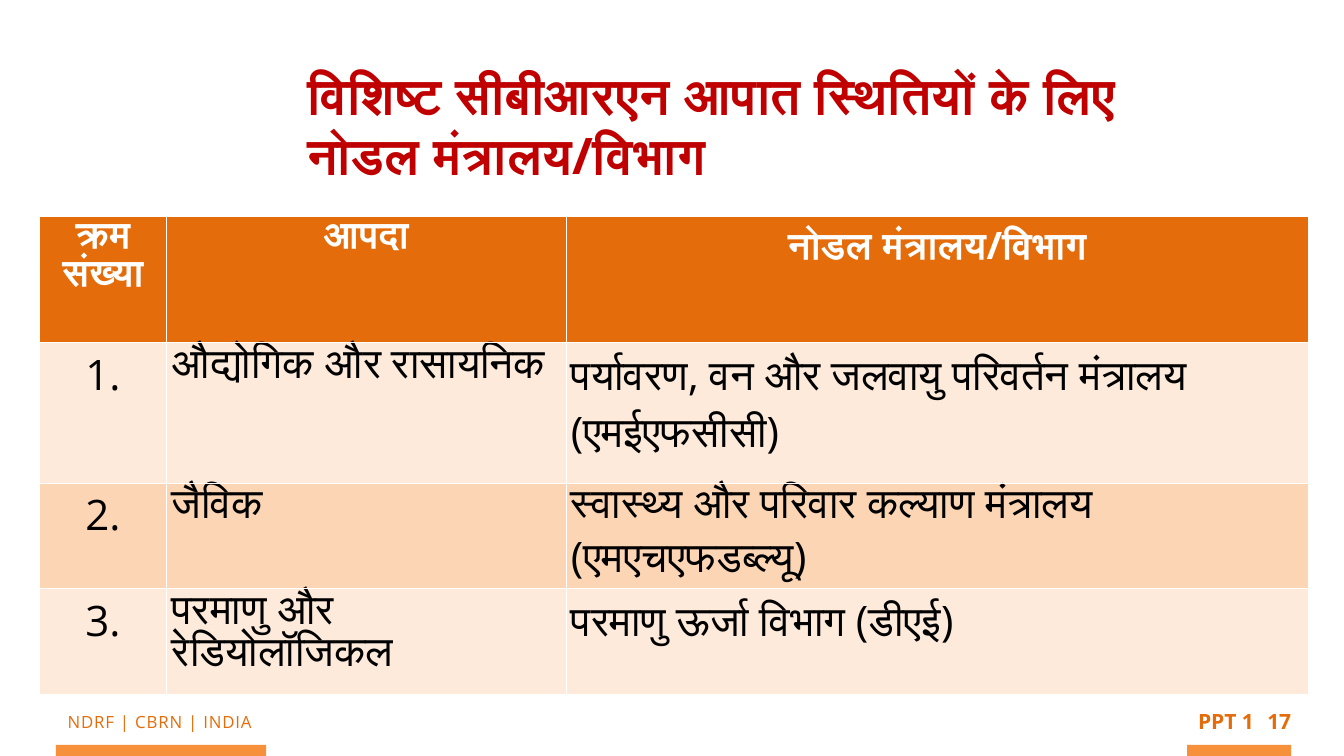
from dataclasses import dataclass
from pptx import Presentation
from pptx.dml.color import RGBColor as Rgb
from pptx.enum.shapes import MSO_SHAPE as Kind
from pptx.enum.text import PP_ALIGN as Align
from pptx.util import Inches, Pt


@dataclass(frozen=True)
class Theme:
    font: str = "Open Sans"
    red: str = "C00000"
    orange: str = "E46C0A"
    bar: str = "F7903B"
    white: str = "FFFFFF"
    black: str = "000000"
    bands: tuple = ("FDEADA", "FCD5B5")
    title: int = 72
    head: int = 54
    body: int = 60
    page: int = 30
    foot: int = 24


class Deck:
    def __init__(self, theme, slide):
        self.theme = theme
        self.slide = slide

    def style(self, para, size, color, bold=False, align=None):
        para.alignment = align
        font = para.font
        font.name, font.size, font.bold = self.theme.font, Pt(size), bold
        font.color.rgb = Rgb.from_string(color)

    def text(self, box, words, size, color, bold=False, align=None,
             wrap=True, track=0):
        shape = self.slide.shapes.add_textbox(*map(Inches, box))
        frame = shape.text_frame
        frame.word_wrap = wrap
        para = frame.paragraphs[0]
        run = para.add_run()
        run.text = words
        if track:
            run.font._element.set("spc", str(track))
        self.style(para, size, color, bold, align)

    def bar(self, left, width):
        shape = self.slide.shapes.add_shape(
            Kind.RECTANGLE, *map(Inches, (left, 14.78, width, 0.22)))
        shape.shadow.inherit = False
        shape.fill.solid()
        shape.fill.fore_color.rgb = Rgb.from_string(self.theme.bar)
        shape.line.fill.background()

    def table(self, left, top, cols, rows, data):
        look = self.theme
        box = map(Inches, (left, top, sum(cols), sum(rows)))
        grid = self.slide.shapes.add_table(len(rows), len(cols), *box).table
        for col, width in zip(grid.columns, cols):
            col.width = Inches(width)
        for r, (row, height) in enumerate(zip(grid.rows, rows)):
            row.height = Inches(height)
            for c, cell in enumerate(row.cells):
                head = r == 0
                cell.text = data[r][c]
                fill = look.orange if head else look.bands[(r - 1) % 2]
                cell.fill.solid()
                cell.fill.fore_color.rgb = Rgb.from_string(fill)
                self.style(cell.text_frame.paragraphs[0],
                           look.head if head else look.body,
                           look.white if head else look.black, head,
                           Align.CENTER if head or c == 0 else Align.LEFT)


def main():
    show = Presentation()
    show.slide_width, show.slide_height = Inches(26.67), Inches(15)
    look = Theme()
    deck = Deck(look, show.slides.add_slide(show.slide_layouts[6]))

    # Footer
    deck.text((0.63, 14.08, 5.08, 0.58), "NDRF | CBRN | INDIA", look.foot,
              look.orange, align=Align.CENTER, track=120)
    deck.text((23.56, 14.01, 1.54, 0.68), "PPT 1 -", look.page,
              look.orange, True, Align.CENTER, wrap=False)
    deck.text((24.89, 14.01, 0.99, 0.55), "17", look.page,
              look.orange, True, Align.CENTER)
    for left, width in ((1.11, 4.17), (23.56, 2.06)):
        deck.bar(left, width)

    # Title
    deck.text((6, 1.22, 17.81, 7.42),
              "विशिष्ट सीबीआरएन आपात स्थितियों के लिए नोडल मंत्रालय/विभाग",
              look.title, look.red, True)

    # Ministries by disaster
    deck.table(0.78, 4.29, (2.53, 7.92, 14.74), (2.51, 2.78, 1.88, 1.88), (
        ("क्रम संख्या", "आपदा", "नोडल मंत्रालय/विभाग"),
        ("1.", "औद्योगिक और रासायनिक",
         "पर्यावरण, वन और जलवायु परिवर्तन मंत्रालय (एमईएफसीसी)"),
        ("2.", "जैविक",
         "स्वास्थ्य और परिवार कल्याण मंत्रालय (एमएचएफडब्ल्यू)"),
        ("3.", "परमाणु और रेडियोलॉजिकल", "परमाणु ऊर्जा विभाग (डीएई)"),
    ))
    show.save("out.pptx")


if __name__ == "__main__":
    main()
